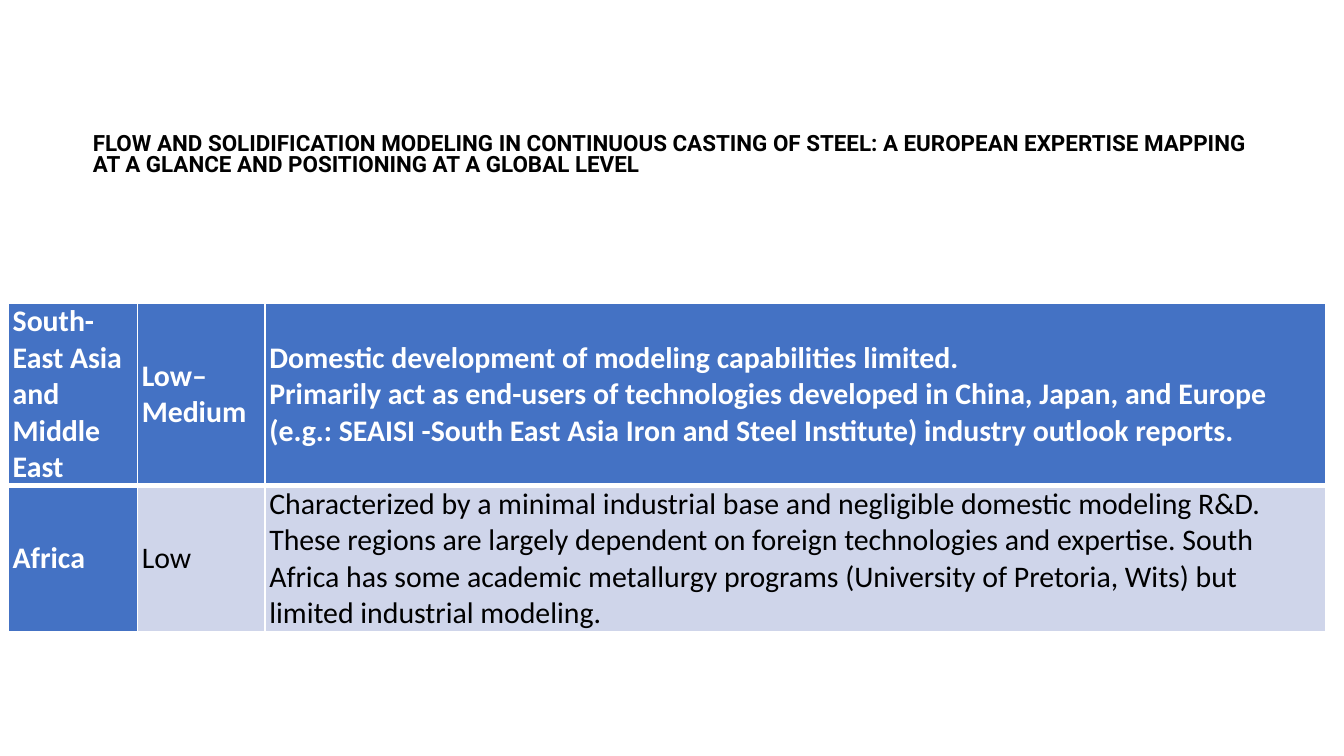
from lxml import etree
from pptx import Presentation
from pptx import util as u
from pptx.dml.color import RGBColor
from pptx.enum import text
from pptx.oxml.ns import qn

BLUE, PALE, WHITE, BLACK = "4472C4", "CFD5EA", "FFFFFF", "000000"

TITLE = ("FLOW AND SOLIDIFICATION MODELING IN CONTINUOUS CASTING OF STEEL: "
         "A EUROPEAN EXPERTISE MAPPING AT A GLANCE AND POSITIONING AT A GLOBAL LEVEL")
REGIONS = [
    ["South-East Asia and Middle East",
     "Low–Medium",
     "Domestic development of modeling capabilities limited.\n"
     "Primarily act as end-users of technologies developed in China, Japan, and Europe "
     "(e.g.: SEAISI -South East Asia Iron and Steel Institute) industry outlook reports."],
    ["Africa",
     "Low",
     "Characterized by a minimal industrial base and negligible domestic modeling R&D. "
     "These regions are largely dependent on foreign technologies and expertise. "
     "South Africa has some academic metallurgy programs (University of Pretoria, Wits) "
     "but limited industrial modeling."],
]


def rgb(value):
    return RGBColor.from_string(value)


def apply(obj, values):
    for name, value in values.items():
        setattr(obj, name, value)


def format_font(font, color, **values):
    apply(font, values)
    font.color.rgb = rgb(color)


def add_border(cell, side, width):
    ln = etree.SubElement(cell._tc.get_or_add_tcPr(), qn(f"a:ln{side}"),
                          w=str(u.Pt(width)))
    fill = etree.SubElement(ln, qn("a:solidFill"))
    etree.SubElement(fill, qn("a:srgbClr"), val=WHITE)


def place_title(s, left, top, width, height):
    sp = s.shapes.title
    apply(sp, dict(left=left, top=top, width=width, height=height))
    tf = sp.text_frame
    tf.text = TITLE
    apply(tf, dict(word_wrap=True, auto_size=text.MSO_AUTO_SIZE.NONE,
                   vertical_anchor=text.MSO_ANCHOR.TOP))
    p = tf.paragraphs[0]
    apply(p, dict(alignment=text.PP_ALIGN.LEFT, line_spacing=0.8,
                  space_before=u.Pt(0), space_after=u.Pt(1.5)))
    format_font(p.runs[0].font, "010101", name="Roboto", size=u.Pt(12), bold=True)


def fill_cell(cell, content, strong, borders):
    cell.text = content
    apply(cell, dict(vertical_anchor=text.MSO_ANCHOR.MIDDLE,
                     margin_left=u.Cm(0.08), margin_right=u.Cm(0.08),
                     margin_top=0, margin_bottom=0))
    for side, width in borders.items():
        add_border(cell, side, width)
    cell.fill.solid()
    cell.fill.fore_color.rgb = rgb(BLUE if strong else PALE)
    for p in cell.text_frame.paragraphs:
        for r in p.runs:
            format_font(r.font, WHITE if strong else BLACK,
                        name="Calibri", size=u.Pt(16), bold=strong)


def place_table(s, left, top, width, height):
    table = s.shapes.add_table(len(REGIONS), 3, left, top, width, height).table
    apply(table, dict(first_row=True, first_col=True, horz_banding=False))
    # The last column takes what the two narrow ones leave
    narrow = [u.Cm(2.44), u.Cm(2.41)]
    for column, size in zip(table.columns, narrow + [width - sum(narrow)]):
        column.width = size
    first = u.Cm(3.41)
    for row, size in zip(table.rows, [first, height - first]):
        row.height = size
    # The first row and first column are emphasised; a thick rule parts the rows
    for i, region in enumerate(REGIONS):
        borders = dict(L=1, R=1, T=3 if i else 1, B=1 if i else 3)
        for j, content in enumerate(region):
            fill_cell(table.cell(i, j), content, i == 0 or j == 0, borders)


def main():
    prs = Presentation()
    apply(prs, dict(slide_width=u.Cm(25.4), slide_height=u.Cm(14.29)))
    s = prs.slides.add_slide(prs.slide_layouts[5])
    # Title
    place_title(s, u.Cm(1.5), u.Cm(2.41), u.Cm(22.43), u.Cm(1.17))
    # Regional expertise table
    place_table(s, u.Cm(0.16), u.Cm(5.73), u.Cm(24.9), u.Cm(6.14))
    prs.save("out.pptx")


if __name__ == "__main__":
    main()
